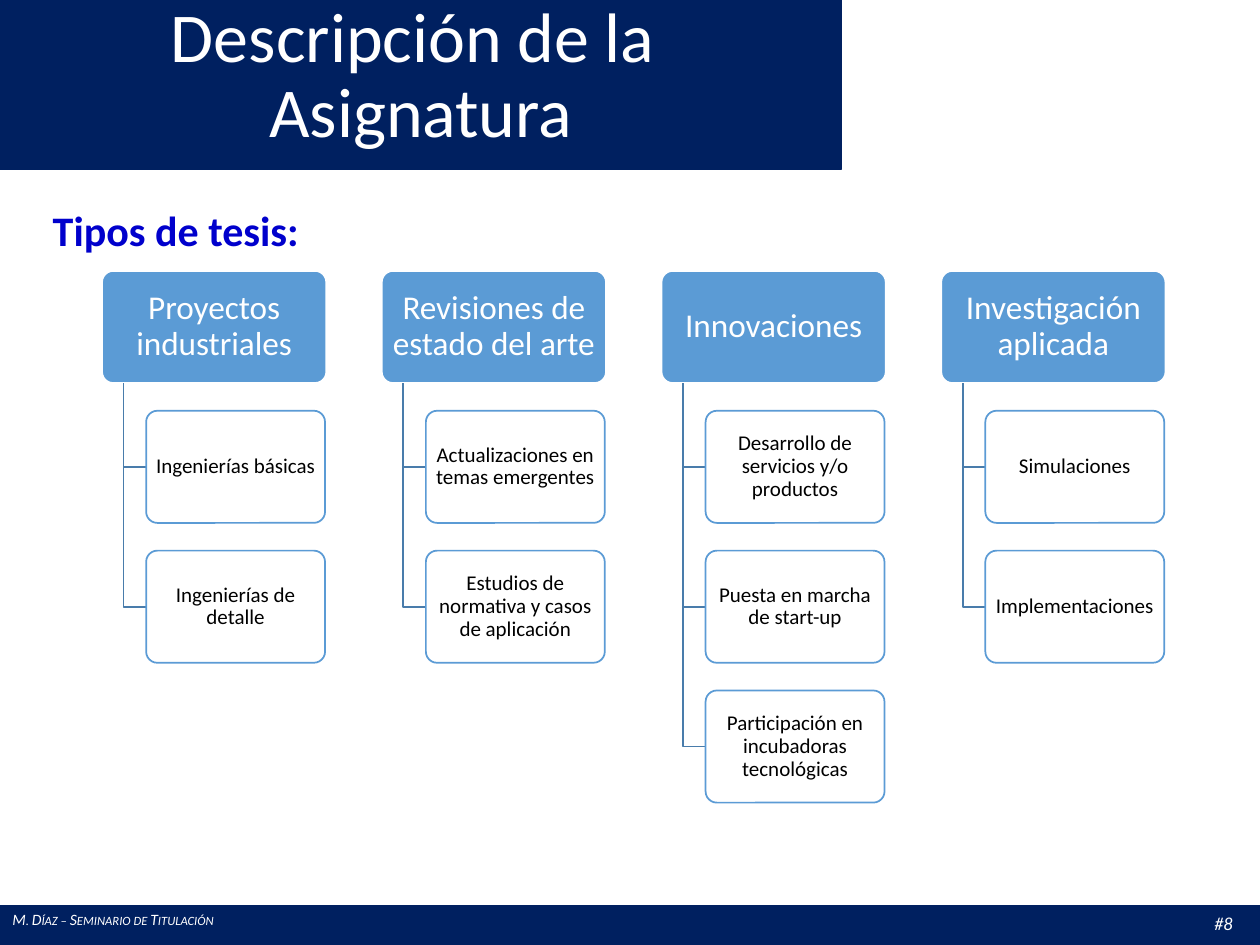
from pptx import Presentation
from pptx.dml.color import RGBColor
from pptx.enum.shapes import MSO_SHAPE
from pptx.enum.text import MSO_ANCHOR, MSO_AUTO_SIZE, PP_ALIGN
from pptx.oxml.ns import qn
from pptx.util import Inches, Pt
from lxml.etree import SubElement

NAVY, BLUE, LINK, WHITE = "002060", "5B9BD5", "497CAB", "FFFFFF"

THESIS_TYPES = {
    "Proyectos industriales": ["Ingenierías básicas", "Ingenierías de detalle"],
    "Revisiones de estado del arte": [
        "Actualizaciones en temas emergentes",
        "Estudios de normativa y casos de aplicación",
    ],
    "Innovaciones": [
        "Desarrollo de servicios y/o productos",
        "Puesta en marcha de start-up",
        "Participación en incubadoras tecnológicas",
    ],
    "Investigación aplicada": ["Simulaciones", "Implementaciones"],
}

# Grid of the diagram, in inches
LEFT, TOP, CARD_HEIGHT = 0.81, 2.15, 0.89
COLUMN_STEP, ROW_STEP = 2.22, 1.11
HEAD_WIDTH, ITEM_WIDTH = 1.78, 1.42
TRUNK_INDENT, ITEM_INDENT = 0.17, 0.35


def color(value):
    return RGBColor.from_string(value)


def write(frame, text, size, fill, bold=False, italic=False, small_caps=False,
          align=PP_ALIGN.LEFT, spacing=None, before=None, after=None):
    """Put one formatted paragraph in a text frame."""
    para = frame.paragraphs[0]
    para.text = text
    para.alignment = align
    para.line_spacing = spacing
    para.space_before, para.space_after = before, after
    for span in para.runs:
        span.font.name, span.font.size = "Calibri", Pt(size)
        span.font.bold, span.font.italic = bold, italic
        span.font.color.rgb = color(fill)
        if small_caps:
            span.font._element.set("cap", "small")


class SlideBuilder:
    def __init__(self, deck):
        self.page = deck.slides.add_slide(deck.slide_layouts[5])
        self.shapes = self.page.shapes

    def box(self, kind, left, top, width, height, fill, line):
        shape = self.shapes.add_shape(
            kind, Inches(left), Inches(top), Inches(width), Inches(height))
        shape.shadow.inherit = False
        shape.fill.solid()
        shape.fill.fore_color.rgb = color(fill)
        shape.line.color.rgb = color(line)
        shape.line.width = Pt(1)
        return shape

    def title(self, text, left, top, width, height):
        title = self.shapes.title
        title.left, title.top = Inches(left), Inches(top)
        title.width, title.height = Inches(width), Inches(height)
        title.text_frame.auto_size = MSO_AUTO_SIZE.NONE
        title.text_frame.vertical_anchor = MSO_ANCHOR.MIDDLE
        write(title.text_frame, text, 40, WHITE, align=PP_ALIGN.CENTER, spacing=0.9)
        # Bring the title in front of the band
        self.shapes.element.append(title.element)

    def label(self, text, left, top, width, height, **style):
        label = self.shapes.add_textbox(
            Inches(left), Inches(top), Inches(width), Inches(height))
        label.text_frame.word_wrap = False
        write(label.text_frame, text, **style)

    def card(self, text, left, top, width, fill, line, size, ink, inset):
        card = self.box(MSO_SHAPE.ROUNDED_RECTANGLE, left, top, width, CARD_HEIGHT, fill, line)
        card.adjustments[0] = 0.1
        frame = card.text_frame
        frame.word_wrap = True
        frame.vertical_anchor = MSO_ANCHOR.MIDDLE
        frame.margin_left = frame.margin_right = Inches(inset)
        frame.margin_top = frame.margin_bottom = Inches(inset - 0.01)
        write(frame, text, size, ink, align=PP_ALIGN.CENTER, spacing=0.9)
        return card

    def head(self, text, left, top):
        self.card(text, left, top, HEAD_WIDTH, BLUE, WHITE, 19, WHITE, 0.04)

    def item(self, text, left, top):
        card = self.card(text, left, top, ITEM_WIDTH, WHITE, BLUE, 12, "000000", 0.03)
        tint = card.element.spPr.find(qn("a:solidFill")).find(qn("a:srgbClr"))
        SubElement(tint, qn("a:alpha")).set("val", "90000")

    def elbow(self, left, top, right, bottom):
        outline = self.shapes.build_freeform(Inches(left), Inches(top))
        outline.add_line_segments(
            [(Inches(left), Inches(bottom)), (Inches(right), Inches(bottom))], close=False)
        elbow = outline.convert_to_shape()
        elbow.shadow.inherit = False
        elbow.fill.background()
        elbow.line.color.rgb = color(LINK)
        elbow.line.width = Pt(1)


def main():
    deck = Presentation()
    deck.slide_width, deck.slide_height = Inches(10), Inches(7.5)
    slide = SlideBuilder(deck)

    # Title band and footer
    slide.box(MSO_SHAPE.RECTANGLE, 0, 0, 6.68, 1.34, NAVY, NAVY)
    slide.box(MSO_SHAPE.RECTANGLE, 0, 7.19, 10, 0.31, NAVY, NAVY)
    slide.label("M. Díaz – Seminario de Titulación", 0, 7.17, 1.87, 0.25,
                size=9, fill=WHITE, italic=True, small_caps=True)
    slide.label("#8", 9.54, 7.19, 0.53, 0.28, size=10.5, fill=WHITE, italic=True)
    slide.title("Descripción de la \vAsignatura", 0, -0.11, 6.68, 1.45)

    # Thesis types: one column each, items hanging from the head
    for column, (head, items) in enumerate(THESIS_TYPES.items()):
        left = LEFT + column * COLUMN_STEP
        slide.head(head, left, TOP)
        for row, item in enumerate(items, start=1):
            top = TOP + row * ROW_STEP
            slide.elbow(left + TRUNK_INDENT, TOP + CARD_HEIGHT,
                        left + ITEM_INDENT, top + CARD_HEIGHT / 2)
            slide.item(item, left + ITEM_INDENT, top)

    # Heading of the diagram
    slide.label("Tipos de tesis:", 0.32, 1.52, 2.18, 0.54, size=24, fill="0000CC",
                bold=True, align=PP_ALIGN.JUSTIFY, spacing=1.14, after=Pt(3))

    deck.save("out.pptx")


if __name__ == "__main__":
    main()
